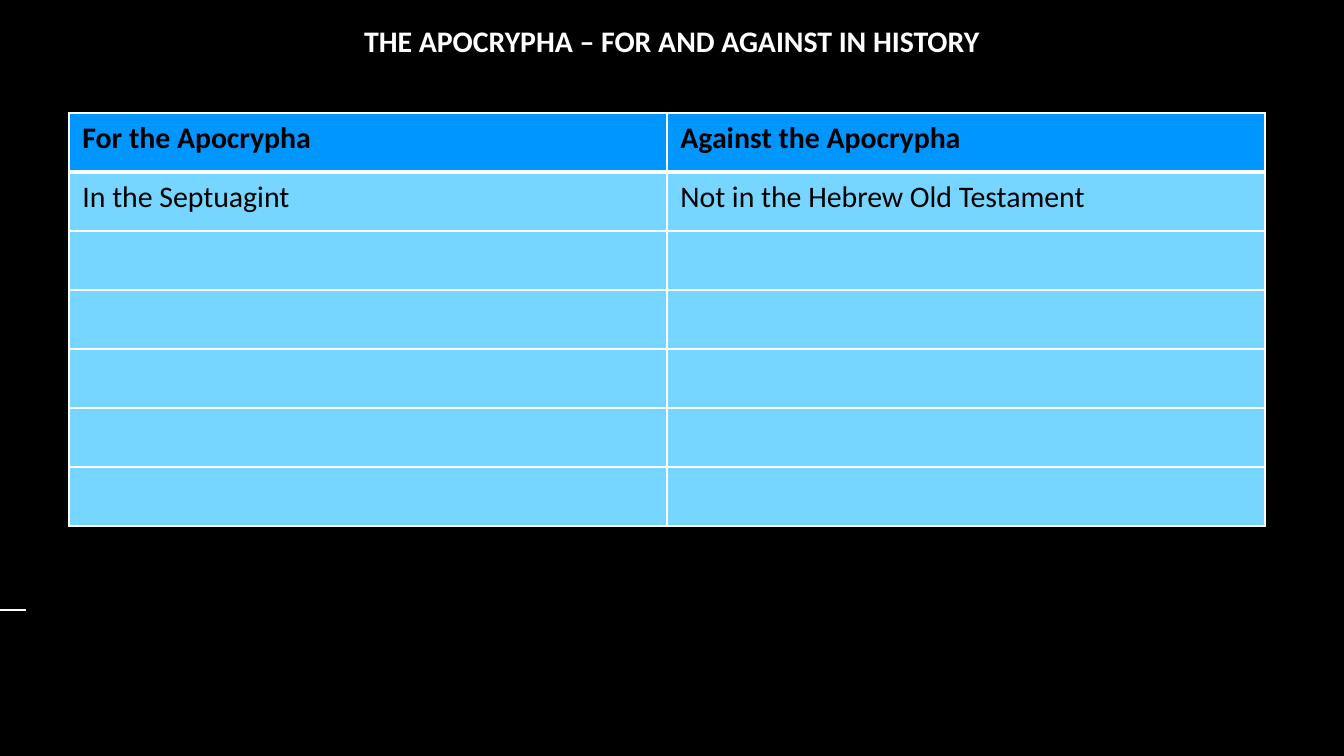
from lxml import etree
from pptx import Presentation
from pptx import util as u
from pptx.dml.color import RGBColor
from pptx.enum import shapes, text
from pptx.oxml import ns

BLACK = RGBColor(0x00, 0x00, 0x00)
WHITE = RGBColor(0xFF, 0xFF, 0xFF)
HEADER_BLUE = RGBColor(0x00, 0x96, 0xFF)
BODY_BLUE = RGBColor(0x76, 0xD6, 0xFF)
FONT = "Calibri"
TEXT_SIZE = 16

TITLE = "THE APOCRYPHA – FOR AND AGAINST IN HISTORY"
ROWS = [
    ("For the Apocrypha", "Against the Apocrypha"),
    ("In the Septuagint", "Not in the Hebrew Old Testament"),
] + [("", "")] * 5

PAGE_WIDTH, PAGE_HEIGHT = 1344, 756
TITLE_BOX = (338, 16, 668, 46)
TABLE_LEFT, TABLE_TOP = 69, 113
COLUMN_WIDTH, ROW_HEIGHT = 598, 59
RULE_START, RULE_END, RULE_Y = -22, 26, 610


def px(length):
    return u.Emu(round(length * u.Inches(10) / PAGE_WIDTH))


def write(paragraph, words, color, bold):
    paragraph.text = words
    font = paragraph.font
    font.name, font.size, font.bold = FONT, u.Pt(TEXT_SIZE), bold
    font.color.rgb = color


def set_borders(cell, widths):
    properties = cell._tc.get_or_add_tcPr()
    for side, points in widths.items():
        line = etree.SubElement(properties, ns.qn(f"a:ln{side}"), w=str(u.Pt(points)))
        fill = etree.SubElement(line, ns.qn("a:solidFill"))
        etree.SubElement(fill, ns.qn("a:srgbClr"), val=str(WHITE))


def add_rule(page):
    rule = page.shapes.add_connector(
        shapes.MSO_CONNECTOR.STRAIGHT,
        px(RULE_START), px(RULE_Y), px(RULE_END), px(RULE_Y))
    rule.line.color.rgb = WHITE
    rule.line.width = u.Pt(0.75)
    etree.SubElement(rule._element.spPr, ns.qn("a:effectLst"))


def add_title(page):
    box = page.shapes.add_textbox(*map(px, TITLE_BOX))
    box.text_frame.word_wrap = True
    paragraph = box.text_frame.paragraphs[0]
    paragraph.alignment = text.PP_ALIGN.CENTER
    write(paragraph, TITLE, WHITE, True)


def add_comparison(page):
    columns = len(ROWS[0])
    table = page.shapes.add_table(
        len(ROWS), columns, px(TABLE_LEFT), px(TABLE_TOP),
        px(COLUMN_WIDTH * columns), px(ROW_HEIGHT * len(ROWS))).table
    for column in table.columns:
        column.width = px(COLUMN_WIDTH)
    for index, (row, entries) in enumerate(zip(table.rows, ROWS)):
        row.height = px(ROW_HEIGHT)
        header = index == 0
        widths = {"L": 1, "R": 1, "T": 3 if index == 1 else 1, "B": 3 if header else 1}
        for cell, entry in zip(row.cells, entries):
            set_borders(cell, widths)
            cell.fill.solid()
            cell.fill.fore_color.rgb = HEADER_BLUE if header else BODY_BLUE
            write(cell.text_frame.paragraphs[0], entry, BLACK, header)


def main():
    deck = Presentation()
    deck.slide_width, deck.slide_height = px(PAGE_WIDTH), px(PAGE_HEIGHT)
    page = deck.slides.add_slide(deck.slide_layouts[6])
    page.background.fill.solid()
    page.background.fill.fore_color.rgb = BLACK
    add_rule(page)
    add_title(page)
    add_comparison(page)
    deck.save("out.pptx")


if __name__ == "__main__":
    main()
